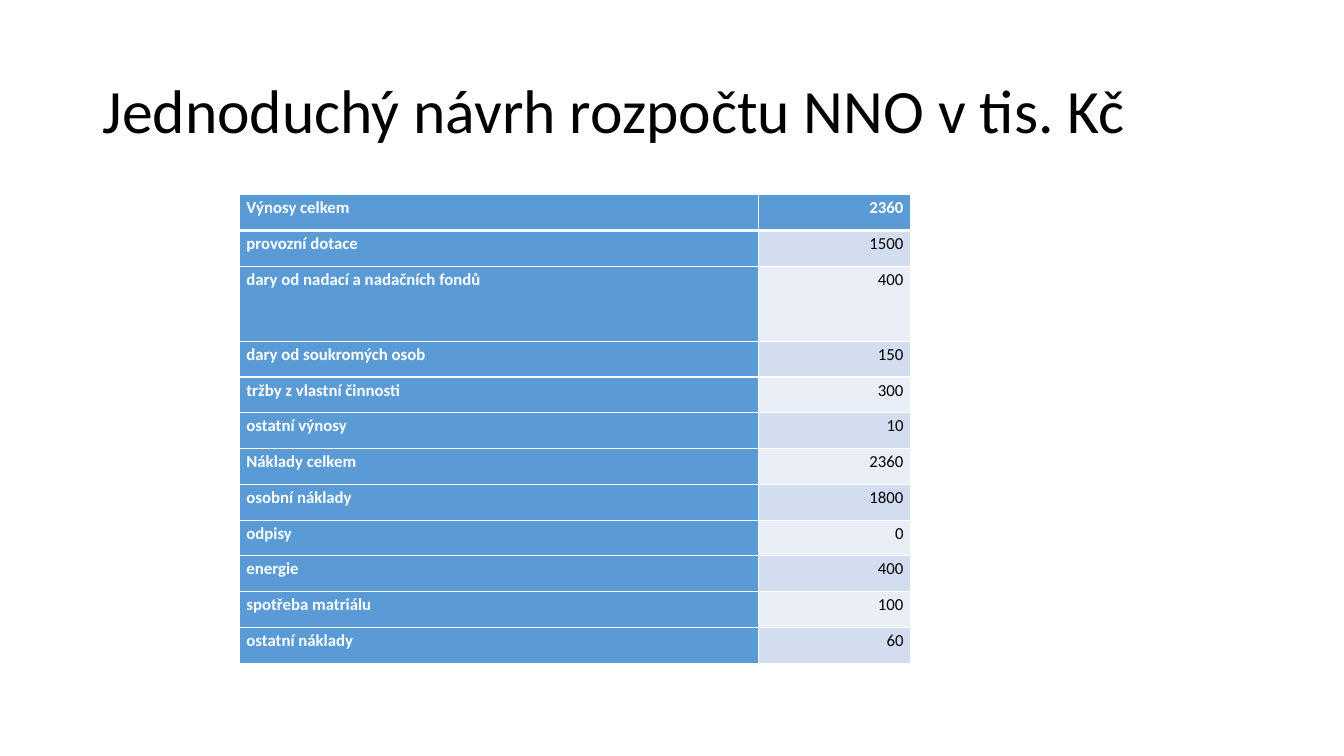
from lxml.etree import SubElement
from pptx import Presentation
from pptx.dml.color import RGBColor
from pptx.enum.text import MSO_ANCHOR, MSO_AUTO_SIZE, PP_ALIGN
from pptx.oxml.ns import qn
from pptx.util import Cm, Pt

WHITE = RGBColor(0xFF, 0xFF, 0xFF)
BLACK = RGBColor(0x00, 0x00, 0x00)
BLUE = RGBColor(0x5B, 0x9B, 0xD5)
BAND_DARK = RGBColor(0xD2, 0xDE, 0xEF)
BAND_LIGHT = RGBColor(0xEA, 0xEF, 0xF7)
FONT = "Calibri"

BUDGET = [
    ("Výnosy celkem", 2360),
    ("provozní dotace", 1500),
    ("dary od nadací a nadačních fondů", 400),
    ("dary od soukromých osob", 150),
    ("tržby z vlastní činnosti", 300),
    ("ostatní výnosy", 10),
    ("Náklady celkem", 2360),
    ("osobní náklady", 1800),
    ("odpisy", 0),
    ("energie", 400),
    ("spotřeba matriálu", 100),
    ("ostatní náklady", 60),
]
TALL_ROW = 2
TALL_ROW_SHARE = 0.16
LABEL_SHARE = 0.773


def set_font(paragraph, size, color, bold=False):
    """Apply the slide font to a whole paragraph."""
    font = paragraph.font
    font.name = FONT
    font.size = Pt(size)
    font.bold = bold
    font.color.rgb = color


def add_title(slide, text, left, top, width, height):
    """Place and format the title placeholder."""
    title = slide.shapes.title
    title.left, title.top, title.width, title.height = left, top, width, height
    frame = title.text_frame
    frame.text = text
    frame.word_wrap = True
    frame.auto_size = MSO_AUTO_SIZE.NONE
    frame.vertical_anchor = MSO_ANCHOR.MIDDLE
    paragraph = frame.paragraphs[0]
    paragraph.alignment = PP_ALIGN.LEFT
    paragraph.line_spacing = 0.9
    set_font(paragraph, 44, BLACK)


def set_borders(cell, top, bottom):
    """Draw white borders around a cell, with widths in points."""
    properties = cell._tc.get_or_add_tcPr()
    for side, width in (("L", 1), ("R", 1), ("T", top), ("B", bottom)):
        line = SubElement(properties, qn(f"a:ln{side}"), w=str(Pt(width)))
        fill = SubElement(line, qn("a:solidFill"))
        SubElement(fill, qn("a:srgbClr"), val=str(WHITE))


def format_cell(cell, row, column):
    """Style a budget cell according to its row and column."""
    emphasized = row == 0 or column == 0
    set_borders(cell, top=3 if row == 1 else 1, bottom=3 if row == 0 else 1)
    cell.fill.solid()
    band = BAND_DARK if row % 2 else BAND_LIGHT
    cell.fill.fore_color.rgb = BLUE if emphasized else band
    cell.margin_left = cell.margin_right = Cm(0.18)
    cell.margin_top = cell.margin_bottom = 0
    cell.vertical_anchor = MSO_ANCHOR.TOP
    paragraph = cell.text_frame.paragraphs[0]
    paragraph.alignment = PP_ALIGN.RIGHT if column else PP_ALIGN.LEFT
    paragraph.line_spacing = 1.15
    set_font(paragraph, 12, WHITE if emphasized else BLACK, emphasized)


def add_budget_table(slide, left, top, width, height):
    """Fill the given box with the budget table."""
    shape = slide.shapes.add_table(len(BUDGET), 2, left, top, width, height)
    table = shape.table
    table.columns[0].width = round(width * LABEL_SHARE)
    table.columns[1].width = width - table.columns[0].width
    tall_height = round(height * TALL_ROW_SHARE)
    row_height = (height - tall_height) // (len(BUDGET) - 1)
    for row, entry in enumerate(BUDGET):
        table.rows[row].height = tall_height if row == TALL_ROW else row_height
        for column, value in enumerate(entry):
            cell = table.cell(row, column)
            cell.text = str(value)
            format_cell(cell, row, column)


def build_budget_slide(presentation):
    """Add the slide with the simple budget."""
    slide = presentation.slides.add_slide(presentation.slide_layouts[5])
    add_title(slide, "Jednoduchý návrh rozpočtu NNO v tis. Kč",
              Cm(2.33), Cm(1.01), Cm(29.21), Cm(3.68))
    add_budget_table(slide, Cm(6.03), Cm(4.91), Cm(16.92), Cm(11.81))


def main():
    """Build and save the presentation."""
    presentation = Presentation()
    presentation.slide_width = Cm(33.87)
    presentation.slide_height = Cm(19.05)
    build_budget_slide(presentation)
    presentation.save("out.pptx")


if __name__ == "__main__":
    main()
